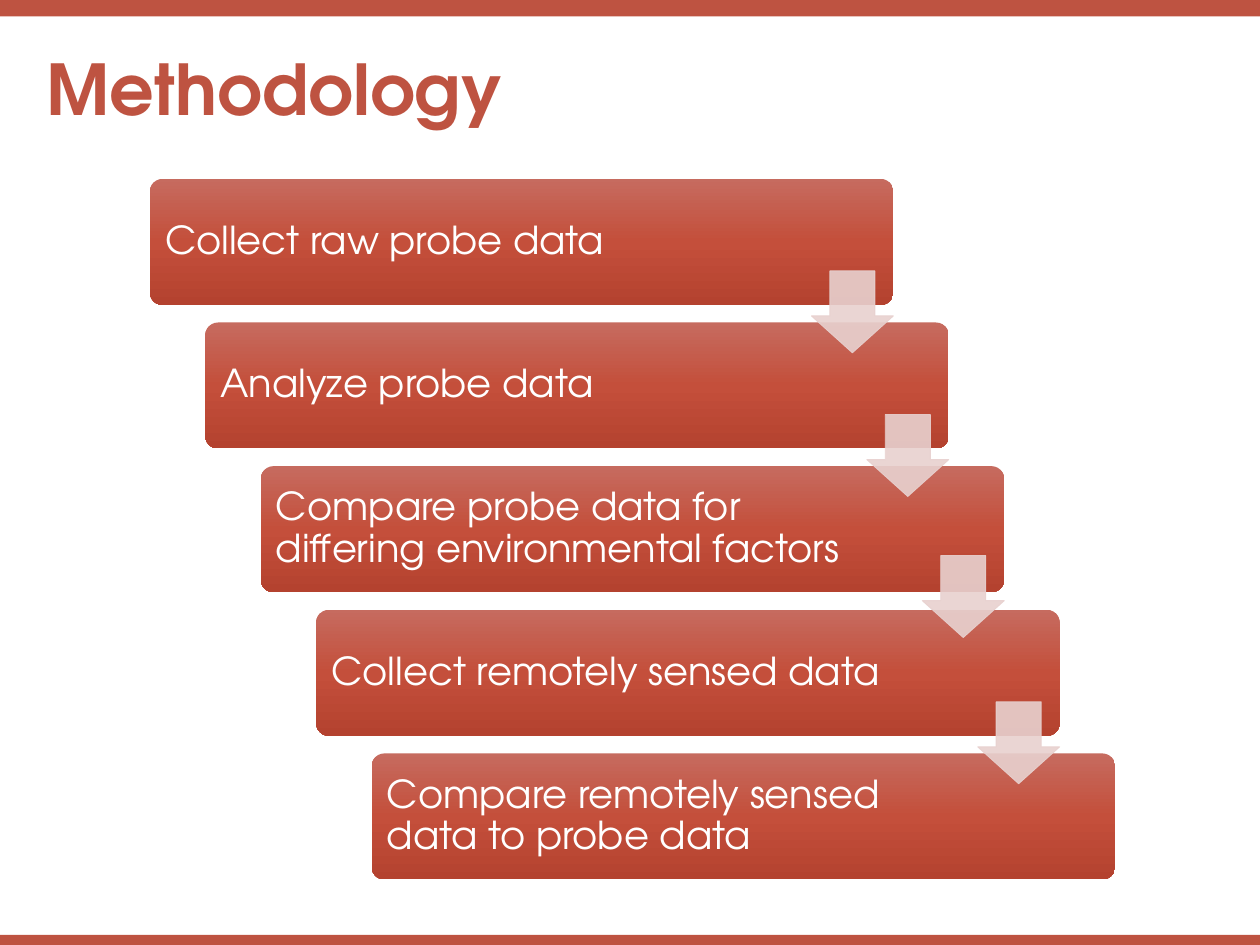
from copy import deepcopy

from lxml import etree
from pptx import Presentation, util as u
from pptx.dml.color import RGBColor
from pptx.enum import shapes, text
from pptx.oxml.ns import qn

COLS, ROWS = 100, 75
STEPS = (
    "Collect raw probe data",
    "Analyze probe data",
    "Compare probe data for differing environmental factors",
    "Collect remotely sensed data",
    "Compare remotely sensed data to probe data",
)
ARROW_ROWS = (21.5, 32.9, 44.1, 55.7)
STEP_X, STEP_Y = 4.4, 11.4


def rgb(value):
    return RGBColor.from_string(value)


def assign(obj, values):
    for name, value in values.items():
        setattr(obj, name, value)


class Deck:
    font = "TeX Gyre Adventor"
    accent, pale, white = "BE5341", "E8D1CF", "FFFFFF"
    gradient = ((0, "C66B5F"), (0.5, "C44F3B"), (1, "B4422F"))

    def __init__(self):
        self.prs = Presentation()
        assign(self.prs, {"slide_width": u.Inches(10), "slide_height": u.Inches(7.5)})
        self.s = self.prs.slides.add_slide(self.prs.slide_layouts[6])

    def box(self, x, y, w, h):
        cw, rh = self.prs.slide_width / COLS, self.prs.slide_height / ROWS
        return [round(v) for v in (x * cw, y * rh, w * cw, h * rh)]

    def shape(self, kind, place, adjust=()):
        sp = self.s.shapes.add_shape(kind, *self.box(*place))
        sp.shadow.inherit = False
        for i, value in enumerate(adjust):
            sp.adjustments[i] = value
        return sp

    def band(self, *place):
        sp = self.shape(shapes.MSO_SHAPE.RECTANGLE, place)
        sp.fill.solid()
        sp.fill.fore_color.rgb = rgb(self.accent)
        sp.line.fill.background()

    def bar(self, *place):
        sp = self.shape(shapes.MSO_SHAPE.ROUNDED_RECTANGLE, place, [0.1])
        sp.line.fill.background()
        sp.fill.gradient()
        sp.fill.gradient_angle = 270
        first = sp._element.spPr.find(".//" + qn("a:gs"))
        first.addnext(deepcopy(first))
        for stop, (position, color) in zip(sp.fill.gradient_stops, self.gradient):
            stop.position = position
            stop.color.rgb = rgb(color)

    def arrow(self, *place):
        sp = self.shape(shapes.MSO_SHAPE.DOWN_ARROW, place, [0.55, 0.45])
        for fill in (sp.fill, sp.line.fill):
            fill.solid()
            fill.fore_color.rgb = rgb(self.pale)
        sp.line.width = u.Pt(0.5)
        for color in sp._element.spPr.iter(qn("a:srgbClr")):
            etree.SubElement(color, qn("a:alpha")).set("val", "90000")

    def label(self, words, place, size, color, anchor, inset, bold=False, before=0):
        tf = self.s.shapes.add_textbox(*self.box(*place)).text_frame
        margins = {f"margin_{side}": u.Inches(inset) for side in ("left", "right")}
        assign(tf, {"word_wrap": True, "vertical_anchor": anchor, **margins})
        p = tf.paragraphs[0]
        assign(p, {"line_spacing": 0.9, "space_before": u.Pt(before)})
        r = p.add_run()
        r.text = words
        assign(r.font, {"name": self.font, "size": u.Pt(size), "bold": bold})
        r.font.color.rgb = rgb(color)


def main():
    deck = Deck()
    anchor = text.MSO_ANCHOR
    deck.band(0, 0, COLS, 1.3)
    deck.band(0, ROWS - 0.8, COLS, 0.8)
    deck.label("Methodology", (2.7, 3.5, 39, 7.4), 40, deck.accent,
               anchor.BOTTOM, 0.1, bold=True, before=10)
    for i, words in enumerate(STEPS):
        x, y = 11.9 + i * STEP_X, 14.2 + i * STEP_Y
        deck.bar(x, y, 59, 10)
        deck.label(words, (x + 0.3, y + 0.3, 47.5, 9.4), 22, deck.white,
                   anchor.MIDDLE, 0.09)
    for i, y in enumerate(ARROW_ROWS):
        deck.arrow(64.4 + i * STEP_X, y, 6.5, 6.5)
    deck.prs.save("out.pptx")


if __name__ == "__main__":
    main()
